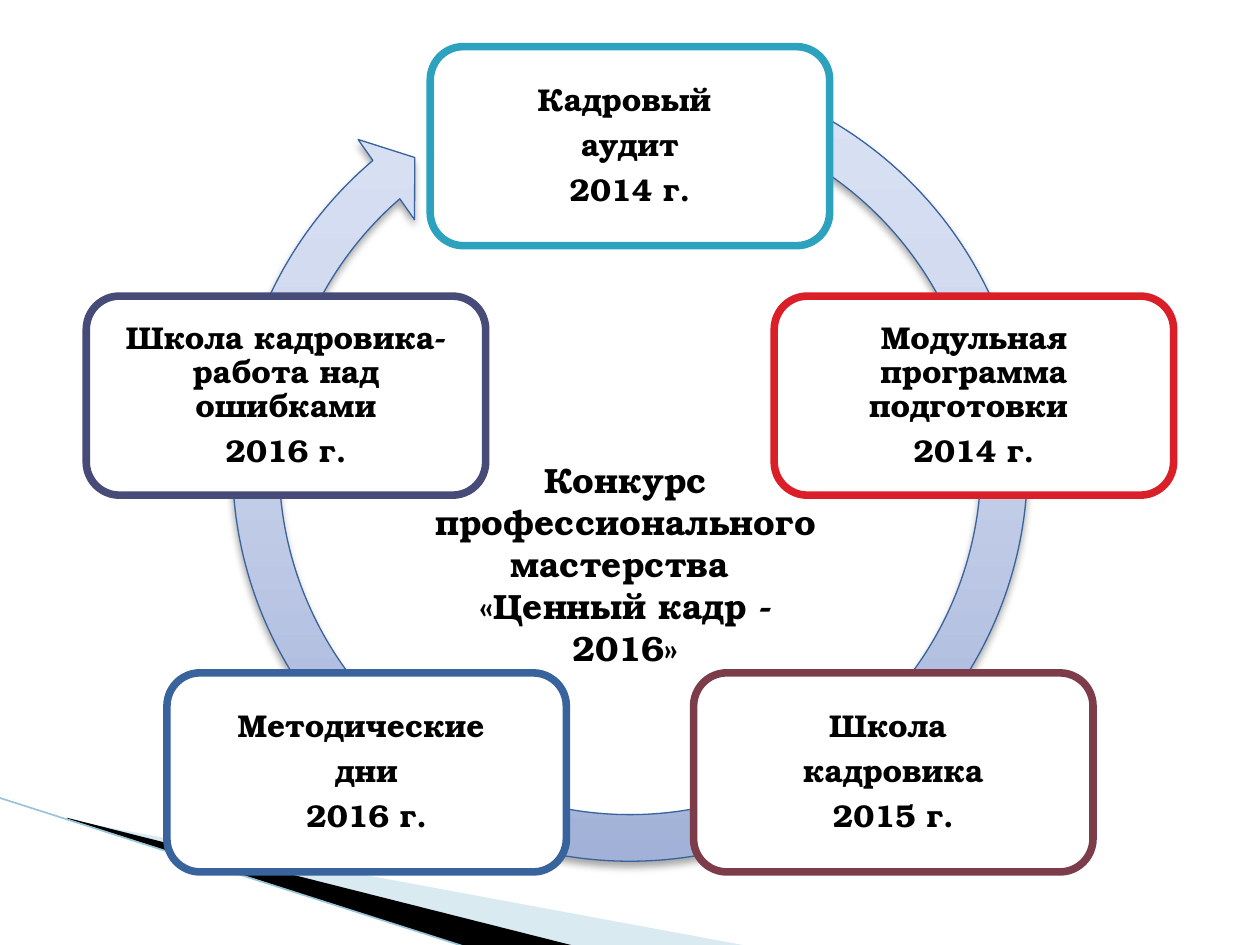
from lxml.etree import SubElement
from pptx import Presentation
from pptx.dml.color import RGBColor
from pptx.enum.shapes import MSO_CONNECTOR, MSO_SHAPE
from pptx.enum.text import MSO_ANCHOR, PP_ALIGN
from pptx.oxml.ns import qn
from pptx.util import Inches, Pt

FONT = "TeX Gyre Bonum"
COLORS = {
    "white": "FFFFFF", "black": "000000", "pale": "A0CBDC", "edge": "97C5D8",
    "teal": "2DA2BF", "red": "DA1F28", "wine": "7D3C4A", "blue": "39639D",
    "navy": "474B78", "low": "9FAFD6", "mid": "D0D9EF", "high": "DCE3F6",
}
MID = 5
BOX_W, BOX_H = 3.17, 1.58
STEPS = [
    (0, 0.37, "teal", ["Кадровый ", "аудит", "2014 г."]),
    (2.73, 2.35, "red", ["Модульная программа подготовки ", "2014 г."]),
    (2.09, 5.34, "wine", ["Школа ", "кадровика", "2015 г."]),
    (-2.09, 5.34, "blue", ["Методические ", "дни", "2016 г."]),
    (-2.73, 2.35, "navy", ["Школа кадровика- работа над ошибками", "2016 г."]),
]
GOAL = ["Конкурс профессионального мастерства ", "«Ценный кадр - 2016»"]


def rgb(name):
    return RGBColor.from_string(COLORS[name])


def sub(node, tag, **attrs):
    return SubElement(node, qn(tag), {k: str(v) for k, v in attrs.items()})


def tint(node, name, alpha=None):
    color = sub(node, "a:srgbClr", val=COLORS[name])
    if alpha is not None:
        sub(color, "a:alpha", val=alpha * 1000)


def write(frame, lines, size=18, pitch=None, after=0, inset=None,
          anchor=MSO_ANCHOR.TOP):
    frame.word_wrap = True
    frame.vertical_anchor = anchor
    if inset is not None:
        frame.margin_left = frame.margin_right = Inches(inset)
        frame.margin_top = frame.margin_bottom = Inches(inset)
    for i, line in enumerate(lines):
        para = frame.paragraphs[0] if i == 0 else frame.add_paragraph()
        para.alignment = PP_ALIGN.CENTER
        para.line_spacing = pitch
        para.space_after = Pt(after)
        run = para.add_run()
        run.text = line
        run.font.name = FONT
        run.font.size = Pt(size)
        run.font.bold = True
        run.font.color.rgb = rgb("black")


def add_wedge(slide, points, color, alpha=None):
    first, *rest = [(Inches(x), Inches(y)) for x, y in points]
    pen = slide.shapes.build_freeform(*first)
    pen.add_line_segments(rest)
    shape = pen.convert_to_shape()
    shape.shadow.inherit = False
    shape.line.fill.background()
    shape.fill.solid()
    shape.fill.fore_color.rgb = rgb(color)
    if alpha is not None:
        dye = shape.fill._xPr.find(qn("a:solidFill"))[0]
        sub(dye, "a:alpha", val=alpha * 1000)


def add_edge(slide):
    line = slide.shapes.add_connector(
        MSO_CONNECTOR.STRAIGHT, Inches(-0.01), Inches(6.33), Inches(3.71), Inches(7.52))
    line.line.color.rgb = rgb("edge")
    line.line.width = Pt(0.95)
    sub(line._element.spPr, "a:effectLst")


def add_cycle(slide):
    side = 6.72
    ring = slide.shapes.add_shape(
        MSO_SHAPE.CIRCULAR_ARROW, Inches(MID - side / 2), Inches(0.32),
        Inches(side), Inches(side))
    for i, value in enumerate([0.055, 3.307, 137.625, 173.941, 0.058]):
        ring.adjustments[i] = value
    ring.line.color.rgb = rgb("blue")
    ring.line.width = Pt(0.75)
    ring.fill.gradient()
    ring.fill.gradient_angle = 90
    props = ring._element.spPr
    stops = props.find(qn("a:gradFill")).find(qn("a:gsLst"))
    for stop in list(stops):
        stops.remove(stop)
    for place, name in [(0, "low"), (65, "mid"), (100, "high")]:
        tint(sub(stops, "a:gs", pos=place * 1000), name)
    ring.shadow.inherit = False
    shade = sub(props.find(qn("a:effectLst")), "a:outerShdw", blurRad=Pt(4),
                dist=Pt(3), dir=90 * 60000, rotWithShape=0)
    tint(shade, "black", 35)


def add_step(slide, shift, top, color, lines):
    box = slide.shapes.add_shape(
        MSO_SHAPE.ROUNDED_RECTANGLE, Inches(MID + shift - BOX_W / 2), Inches(top),
        Inches(BOX_W), Inches(BOX_H))
    box.shadow.inherit = False
    box.fill.solid()
    box.fill.fore_color.rgb = rgb("white")
    box.line.color.rgb = rgb(color)
    box.line.width = Pt(4.33)
    write(box.text_frame, lines, pitch=0.9, after=6.3, inset=0.07,
          anchor=MSO_ANCHOR.MIDDLE)


def add_goal(slide):
    box = slide.shapes.add_textbox(Inches(3.35), Inches(3.59), Inches(3.23), Inches(2.09))
    write(box.text_frame, GOAL, size=20)


def main():
    deck = Presentation()
    deck.slide_width, deck.slide_height = Inches(10), Inches(7.5)
    slide = deck.slides.add_slide(deck.slide_layouts[6])
    add_wedge(slide, [(0.55, 6.51), (5.95, 7.51), (4.56, 7.51), (0.55, 6.5)], "pale", 40)
    add_wedge(slide, [(0.53, 6.49), (4.57, 7.51), (3.72, 7.52), (0.54, 6.5)], "black")
    add_edge(slide)
    add_cycle(slide)
    for step in STEPS:
        add_step(slide, *step)
    add_goal(slide)
    deck.save("out.pptx")


if __name__ == "__main__":
    main()
